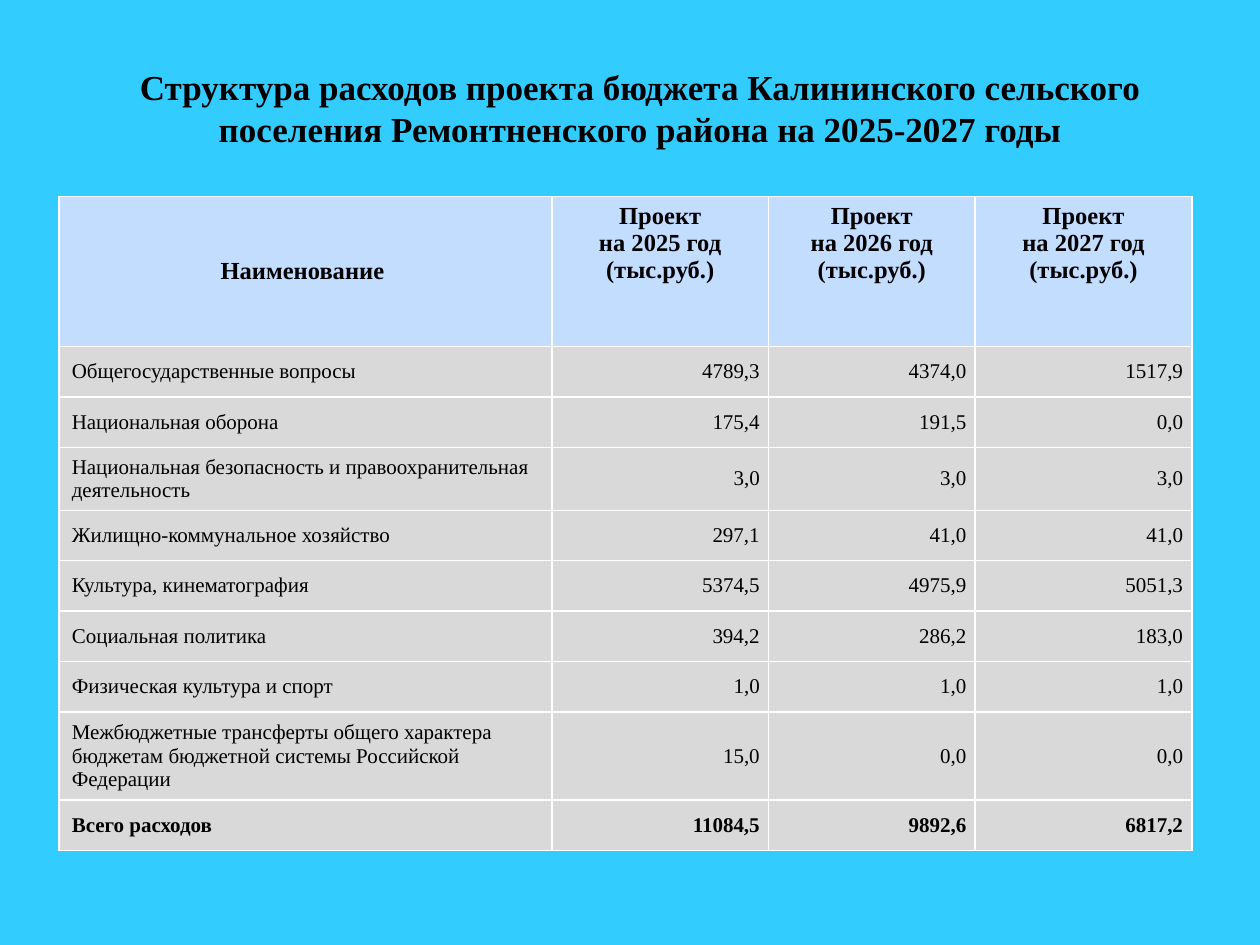
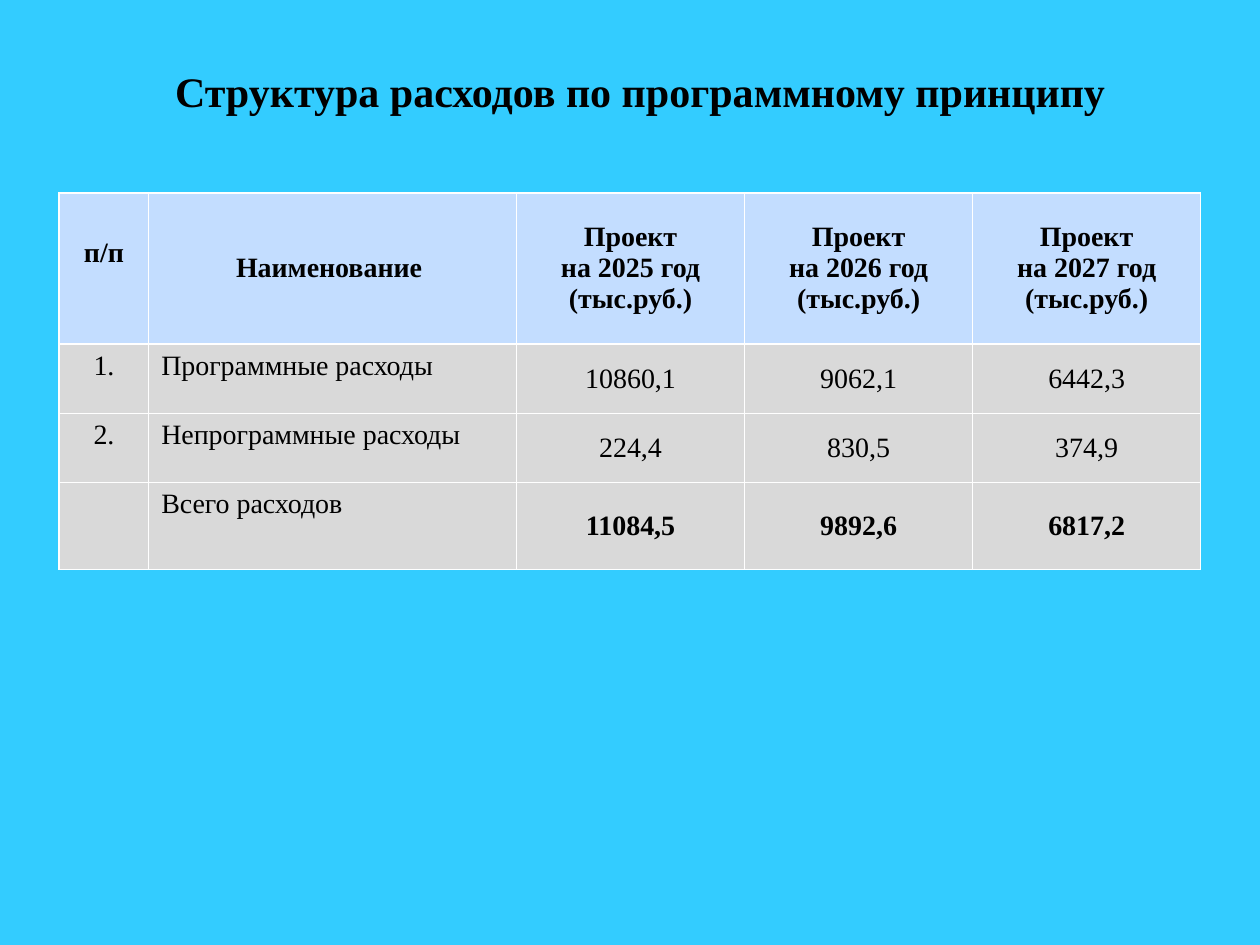
"""Builds two budget expenditure slides, each a title above a table."""
from pptx import Presentation
from pptx.dml.color import RGBColor
from pptx.enum.text import MSO_ANCHOR as ANCHOR, PP_ALIGN as ALIGN
from pptx.util import Inches, Pt

FONT = "Times New Roman"
SKY = RGBColor(0x33, 0xCC, 0xFF)
HEADER = RGBColor(0xC3, 0xDD, 0xFF)
GREY = RGBColor(0xD9, 0xD9, 0xD9)
BLACK = RGBColor(0, 0, 0)
LEFT, TITLE_TOP = 0.47, 0.47

YEARS = [f"Проект\nна {year} год\n(тыс.руб.)" for year in (2025, 2026, 2027)]
TOTALS = ["11084,5", "9892,6", "6817,2"]

SLIDES = [
    dict(
        title="Структура расходов проекта бюджета Калининского сельского "
              "поселения Ремонтненского района на 2025-2027 годы",
        title_size=20, title_box=(LEFT, 9.22, 0.77),
        top=1.56, cols=[3.91, 1.72, 1.64, 1.72],
        heights=[1.19, 0.4, 0.4, 0.49, 0.4, 0.4, 0.4, 0.4, 0.68, 0.4],
        head_size=14, body_size=12, year_anchor=ANCHOR.TOP,
        label_anchor=ANCHOR.MIDDLE, number_align=ALIGN.RIGHT, bold_total_label=True,
        rows=[
            ["Наименование ", *YEARS],
            ["Общегосударственные вопросы", "4789,3", "4374,0", "1517,9"],
            ["Национальная оборона", "175,4", "191,5", "0,0"],
            ["Национальная безопасность и правоохранительная деятельность",
             "3,0", "3,0", "3,0"],
            ["Жилищно-коммунальное хозяйство", "297,1", "41,0", "41,0"],
            ["Культура, кинематография", "5374,5", "4975,9", "5051,3"],
            ["Социальная политика", "394,2", "286,2", "183,0"],
            ["Физическая культура и спорт", "1,0", "1,0", "1,0"],
            ["Межбюджетные трансферты общего характера бюджетам "
             "бюджетной системы Российской Федерации", "15,0", "0,0", "0,0"],
            ["Всего расходов", *TOTALS],
        ],
    ),
    dict(
        title="Структура расходов по программному принципу",
        title_size=24, title_box=(0.86, 8.44, 0.5),
        top=1.53, cols=[0.71, 2.92, 1.81, 1.81, 1.81],
        heights=[1.2, 0.55, 0.55, 0.69],
        head_size=16, body_size=16, year_anchor=ANCHOR.MIDDLE,
        label_anchor=ANCHOR.TOP, number_align=ALIGN.CENTER, bold_total_label=False,
        rows=[
            ["п/п", "Наименование ", *YEARS],
            ["1.", "Программные расходы", "10860,1", "9062,1", "6442,3"],
            ["2.", "Непрограммные расходы", "224,4", "830,5", "374,9"],
            ["", "Всего расходов", *TOTALS],
        ],
    ),
]


def write(tf, text, size, bold, align):
    tf.text = text
    for p in tf.paragraphs:
        p.alignment = align
        for r in p.runs:
            r.font.name, r.font.size, r.font.bold = FONT, Pt(size), bold
            r.font.color.rgb = BLACK


def add_title(s, data):
    left, width, height = map(Inches, data["title_box"])
    tf = s.shapes.add_textbox(left, Inches(TITLE_TOP), width, height).text_frame
    tf.word_wrap = True
    write(tf, data["title"], data["title_size"], True, ALIGN.CENTER)


def fill_cell(cell, text, row, col, data):
    is_head, is_total = row == 0, row == len(data["rows"]) - 1
    label_col = len(data["cols"]) - len(YEARS) - 1
    is_number = col > label_col
    cell.fill.solid()
    cell.fill.fore_color.rgb = HEADER if is_head else GREY
    if is_head:
        align = ALIGN.CENTER
        cell.vertical_anchor = data["year_anchor"] if is_number else ANCHOR.MIDDLE
        if col < label_col:
            cell.margin_bottom = Inches(0.3)
    elif is_number:
        align = data["number_align"]
        cell.vertical_anchor = ANCHOR.MIDDLE
        cell.margin_left = cell.margin_right = Inches(0.07)
        cell.margin_top = cell.margin_bottom = 0
    else:
        align = ALIGN.LEFT if col == label_col else ALIGN.CENTER
        cell.vertical_anchor = data["label_anchor"]
    bold = is_head or is_total and (is_number or data["bold_total_label"])
    size = data["head_size"] if is_head else data["body_size"]
    write(cell.text_frame, text, size, bold, align)


def add_budget_table(s, data):
    cols, heights = data["cols"], data["heights"]
    table = s.shapes.add_table(
        len(heights), len(cols), Inches(LEFT), Inches(data["top"]),
        Inches(sum(cols)), Inches(sum(heights))).table
    table.horz_banding = False
    for column, width in zip(table.columns, cols):
        column.width = Inches(width)
    for i, (height, texts) in enumerate(zip(heights, data["rows"])):
        table.rows[i].height = Inches(height)
        for j, text in enumerate(texts):
            fill_cell(table.cell(i, j), text, i, j, data)


def main():
    prs = Presentation()
    prs.slide_width, prs.slide_height = Inches(10), Inches(7.5)
    for data in SLIDES:
        s = prs.slides.add_slide(prs.slide_layouts[6])
        s.background.fill.solid()
        s.background.fill.fore_color.rgb = SKY
        add_title(s, data)
        add_budget_table(s, data)
    prs.save("out.pptx")


if __name__ == "__main__":
    main()
